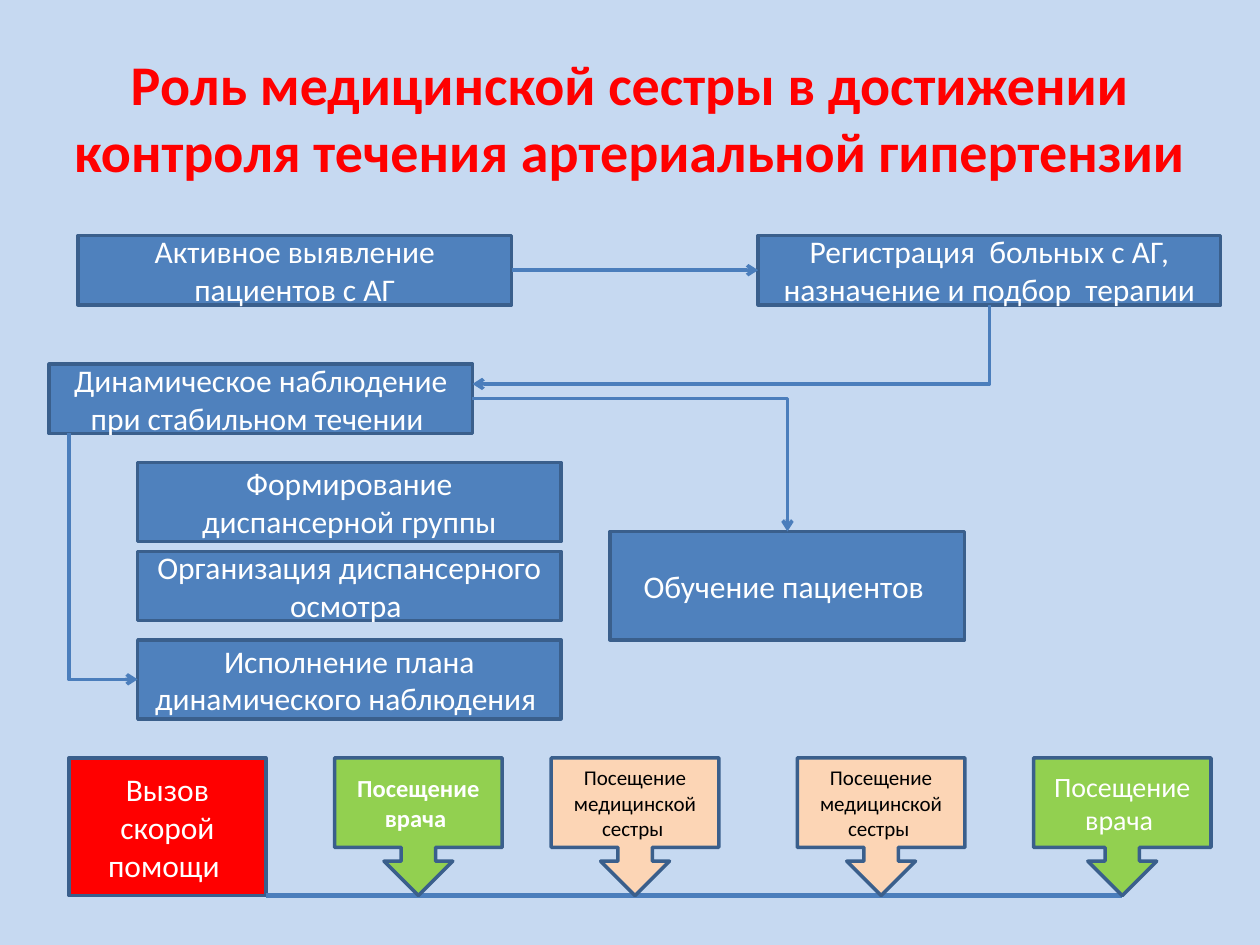
"""Build the slide on the nurse's role in controlling hypertension."""
from lxml.etree import SubElement
from pptx import Presentation
from pptx.dml.color import RGBColor
from pptx.enum.shapes import MSO_CONNECTOR, MSO_SHAPE
from pptx.enum.text import MSO_ANCHOR, PP_ALIGN
from pptx.oxml.ns import qn
from pptx.util import Pt


class Theme:
    font = "Calibri"
    back = RGBColor.from_string("C6D9F1")
    red = RGBColor.from_string("FF0000")
    blue = RGBColor.from_string("4F81BD")
    edge = RGBColor.from_string("3A5F8C")
    link = RGBColor.from_string("4B7EBC")
    green = RGBColor.from_string("92D050")
    peach = RGBColor.from_string("FCD5B5")
    white = RGBColor.from_string("FFFFFF")
    black = RGBColor.from_string("000000")
    title, body, visit, bold, small = Pt(32), Pt(18), Pt(16), Pt(14), Pt(12)
    thin, thick = Pt(2), Pt(3)


def write(shape, text, size, color, bold=False):
    frame = shape.text_frame
    frame.word_wrap = True
    frame.vertical_anchor = MSO_ANCHOR.MIDDLE
    line = frame.paragraphs[0]
    line.alignment = PP_ALIGN.CENTER
    run = line.add_run()
    run.text = text
    run.font.name = Theme.font
    run.font.size = size
    run.font.bold = bold
    run.font.color.rgb = color


def connect(kind, start, end, width=Theme.thin, arrow=True):
    line = slide.shapes.add_connector(kind, *map(Pt, start + end))
    line.line.color.rgb = Theme.link
    line.line.width = width
    if arrow:
        SubElement(line.get_or_add_ln(), qn("a:tailEnd"), type="arrow")
    SubElement(line._element.spPr, qn("a:effectLst"))
    return line


deck = Presentation()
deck.slide_width, deck.slide_height = Pt(720), Pt(540)
slide = deck.slides.add_slide(deck.slide_layouts[5])
slide.background.fill.solid()
slide.background.fill.fore_color.rgb = Theme.back

title = slide.shapes.title
title.left, title.top, title.width, title.height = Pt(22.3), Pt(21.6), Pt(675.4), Pt(90)
write(title, "Роль медицинской сестры в достижении контроля течения артериальной гипертензии",
      Theme.title, Theme.red, True)

steps = [
    ("Активное выявление пациентов с АГ", 44.6, 134.6, 247.8, 39.6, Theme.blue),
    ("Регистрация  больных с АГ, назначение и подбор  терапии", 433.2, 134.6, 264.4, 39.6, Theme.blue),
    ("Динамическое наблюдение при стабильном течении ", 28.1, 208.1, 241.9, 39.6, Theme.blue),
    ("Формирование диспансерной группы", 78.7, 264.3, 241.9, 45.2, Theme.blue),
    ("Организация диспансерного осмотра ", 78.7, 315, 241.9, 39.6, Theme.blue),
    ("Исполнение плана динамического наблюдения ", 78.7, 365.6, 241.9, 45.2, Theme.blue),
    ("Обучение пациентов ", 348.6, 303.7, 202.6, 62, Theme.blue),
    ("Вызов скорой помощи ", 39.4, 433.1, 112.5, 78.7, Theme.red),
]
boxes = []
for text, left, top, width, height, fill in steps:
    box = slide.shapes.add_shape(MSO_SHAPE.RECTANGLE, Pt(left), Pt(top), Pt(width), Pt(height))
    box.shadow.inherit = False
    box.fill.solid()
    box.fill.fore_color.rgb = fill
    box.line.color.rgb = Theme.edge
    box.line.width = Theme.thin
    write(box, text, Theme.body, Theme.white)
    boxes.append(box)

arrow = connect(MSO_CONNECTOR.STRAIGHT, (292.4, 154.4), (433.2, 154.4))
arrow.begin_connect(boxes[0], 3)
arrow.end_connect(boxes[1], 1)

bends = [
    ((565.4, 174.2), (270, 219.4), True),
    ((39.4, 247.7), (78.7, 388.2), True),
    ((270, 227.7), (450, 303.7), False),
]
for start, end, down in bends:
    bend = connect(MSO_CONNECTOR.ELBOW, start, end)
    props = bend._element.spPr
    props.find(qn("a:prstGeom")).set("prst", "bentConnector2")
    if down:
        (x1, y1), (x2, y2) = start, end
        wide, high = abs(y2 - y1), abs(x2 - x1)
        bend.left, bend.top = Pt((x1 + x2 - wide) / 2), Pt((y1 + y2 - high) / 2)
        bend.width, bend.height = Pt(wide), Pt(high)
        frame = props.find(qn("a:xfrm"))
        frame.set("rot", str((90 if x2 < x1 else 270) * 60000))
        frame.set("flipH", str(int(x2 > x1)))

connect(MSO_CONNECTOR.STRAIGHT, (151.9, 511.8), (641.3, 511.8), Theme.thick, False)

doctor, nurse = "Посещение врача ", "Посещение медицинской сестры "
visits = [
    (doctor, 191.2, 95.8, Theme.green, Theme.bold, Theme.white, True),
    (nurse, 315, 95.8, Theme.peach, Theme.small, Theme.black, False),
    (nurse, 455.6, 95.8, Theme.peach, Theme.small, Theme.black, False),
    (doctor, 590.6, 101.4, Theme.green, Theme.visit, Theme.white, False),
]
for text, left, width, fill, size, color, bold in visits:
    call = slide.shapes.add_shape(MSO_SHAPE.DOWN_ARROW_CALLOUT, Pt(left), Pt(433.1), Pt(width), Pt(78.7))
    call.shadow.inherit = False
    call.fill.solid()
    call.fill.fore_color.rgb = fill
    call.line.color.rgb = Theme.edge
    call.line.width = Theme.thin
    write(call, text, size, color, bold)

deck.save("out.pptx")
